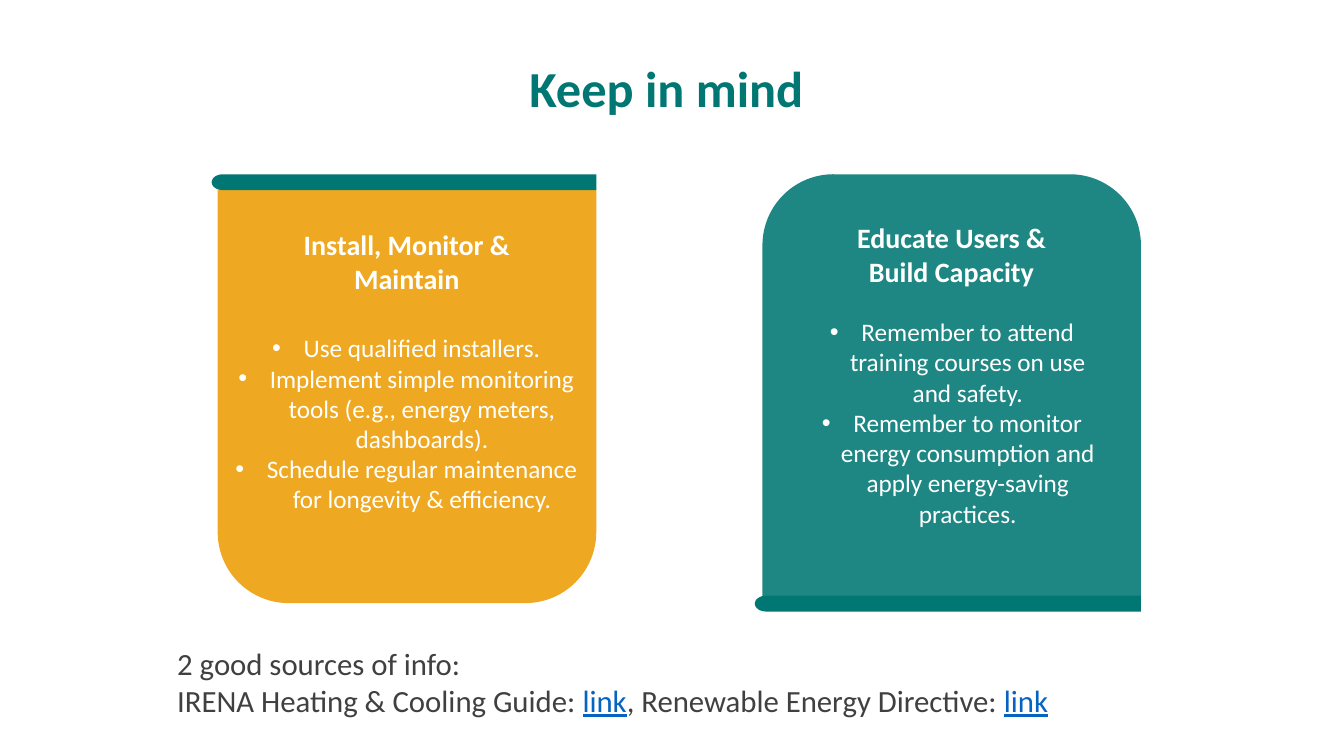
import math

import lxml.etree
import pptx
import pptx.dml.color
import pptx.enum.shapes
import pptx.enum.text
import pptx.oxml.ns
import pptx.util

Pt = pptx.util.Pt
ALIGN = pptx.enum.text.PP_ALIGN
COLORS = {
    "teal": "007772",
    "amber": "EEA821",
    "white": "FFFFFF",
    "gray": "404040",
    "link": "0563C1",
}
FONT = "Calibri"
CORNER_RADIUS = 50.7
BAR_HEIGHT = 11.3


def rgb(name):
    return pptx.dml.color.RGBColor.from_string(COLORS[name])


def add_child(parent, tag, **attributes):
    return lxml.etree.SubElement(parent, pptx.oxml.ns.qn(tag), attributes)


def paint(shape, color, opacity=100):
    shape.shadow.inherit = False
    shape.fill.solid()
    shape.fill.fore_color.rgb = rgb(color)
    shape.line.fill.background()
    if opacity < 100:
        color_element = shape.fill._xPr.find(".//" + pptx.oxml.ns.qn("a:srgbClr"))
        add_child(color_element, "a:alpha", val=str(opacity * 1000))


def add_card(slide, left, top, width, height, color, round_top, opacity=100):
    """Add a panel with two rounded corners, at its top or at its bottom."""
    shape = slide.shapes.add_shape(
        pptx.enum.shapes.MSO_SHAPE.ROUND_2_SAME_RECTANGLE,
        Pt(left), Pt(top), Pt(width), Pt(height))
    radius = CORNER_RADIUS / width
    shape.adjustments[0] = radius if round_top else 0
    shape.adjustments[1] = 0 if round_top else radius
    paint(shape, color, opacity)


def add_bar(slide, left, top, width):
    """Add a thin bar with an elliptical left end and a square right end."""
    cap_width, cap_height = 8, BAR_HEIGHT / 2
    angles = [math.radians(degrees) for degrees in range(90, 271, 10)]
    cap = [(Pt(left + cap_width * (1 + math.cos(angle))),
            Pt(top + cap_height * (1 + math.sin(angle)))) for angle in angles]
    right = Pt(left + width)
    builder = slide.shapes.build_freeform(right, Pt(top + BAR_HEIGHT))
    builder.add_line_segments(cap + [(right, Pt(top))], close=True)
    paint(builder.convert_to_shape(), "teal")


def add_bullet(paragraph, color):
    properties = paragraph._p.get_or_add_pPr()
    properties.set("marL", str(Pt(22.5)))
    properties.set("indent", str(Pt(-22.5)))
    bullet_color = add_child(properties, "a:buClr")
    add_child(bullet_color, "a:srgbClr", val=COLORS[color])
    add_child(properties, "a:buFont", typeface="Arial")
    add_child(properties, "a:buChar", char="•")


def add_text(slide, left, top, width, height, paragraphs, size, color,
             bold=False, bullets=False, align=ALIGN.CENTER, line_spacing=None):
    """Add a text box; each paragraph is a list of (text, is_link) runs."""
    box = slide.shapes.add_textbox(Pt(left), Pt(top), Pt(width), Pt(height))
    frame = box.text_frame
    frame.word_wrap = True
    for index, runs in enumerate(paragraphs):
        paragraph = frame.add_paragraph() if index else frame.paragraphs[0]
        paragraph.alignment = align
        if line_spacing:
            paragraph.line_spacing = line_spacing
        if bullets:
            add_bullet(paragraph, color)
        paragraph.font.name = FONT
        paragraph.font.size = Pt(size)
        paragraph.font.bold = bold
        paragraph.font.color.rgb = rgb(color)
        for text, is_link in runs:
            run = paragraph.add_run()
            run.text = text
            if is_link:
                run.font.color.rgb = rgb("link")
                run.font.underline = True


def plain(*texts):
    return [[(text, False)] for text in texts]


def main():
    presentation = pptx.Presentation()
    presentation.slide_width = Pt(960)
    presentation.slide_height = Pt(540)
    slide = presentation.slides.add_slide(presentation.slide_layouts[6])

    add_card(slide, 155.5, 135.4, 270.4, 295.4, "amber", round_top=False)
    add_bar(slide, 151.2, 124.5, 274.7)
    add_card(slide, 544.6, 124.5, 270.4, 303.2, "teal", round_top=True, opacity=88)
    add_bar(slide, 539.2, 425.5, 275.8)

    add_text(slide, 0, 42.5, 952, 63.4, plain("Keep in mind"), 36, "teal",
             bold=True, line_spacing=0.9)

    headings = [
        (200.2, 159.1, 180.7, "Install, Monitor & Maintain"),
        (586.8, 154.1, 185.8, "Educate Users & Build Capacity"),
    ]
    for left, top, width, heading in headings:
        add_text(slide, left, top, width, 55.4, plain(heading), 20, "white", bold=True)

    advice = [
        (160.6, 234, 259.2, 138.2, plain(
            "Use qualified installers.",
            "Implement simple monitoring tools (e.g., energy meters, dashboards).",
            "Schedule regular maintenance for longevity & efficiency.")),
        (563, 222.5, 234, 159.8, plain(
            "Remember to attend training courses on use and safety.",
            "Remember to monitor energy consumption and apply energy-saving practices.")),
    ]
    for left, top, width, height, points in advice:
        add_text(slide, left, top, width, height, points, 18, "white", bullets=True)

    sources = plain("2 good sources of info:") + [[
        ("IRENA Heating & Cooling Guide: ", False), ("link", True),
        (", Renewable Energy Directive: ", False), ("link", True)]]
    add_text(slide, 119.5, 457.2, 680.4, 60.5, sources, 22, "gray", align=ALIGN.LEFT)

    presentation.save("out.pptx")


if __name__ == "__main__":
    main()
